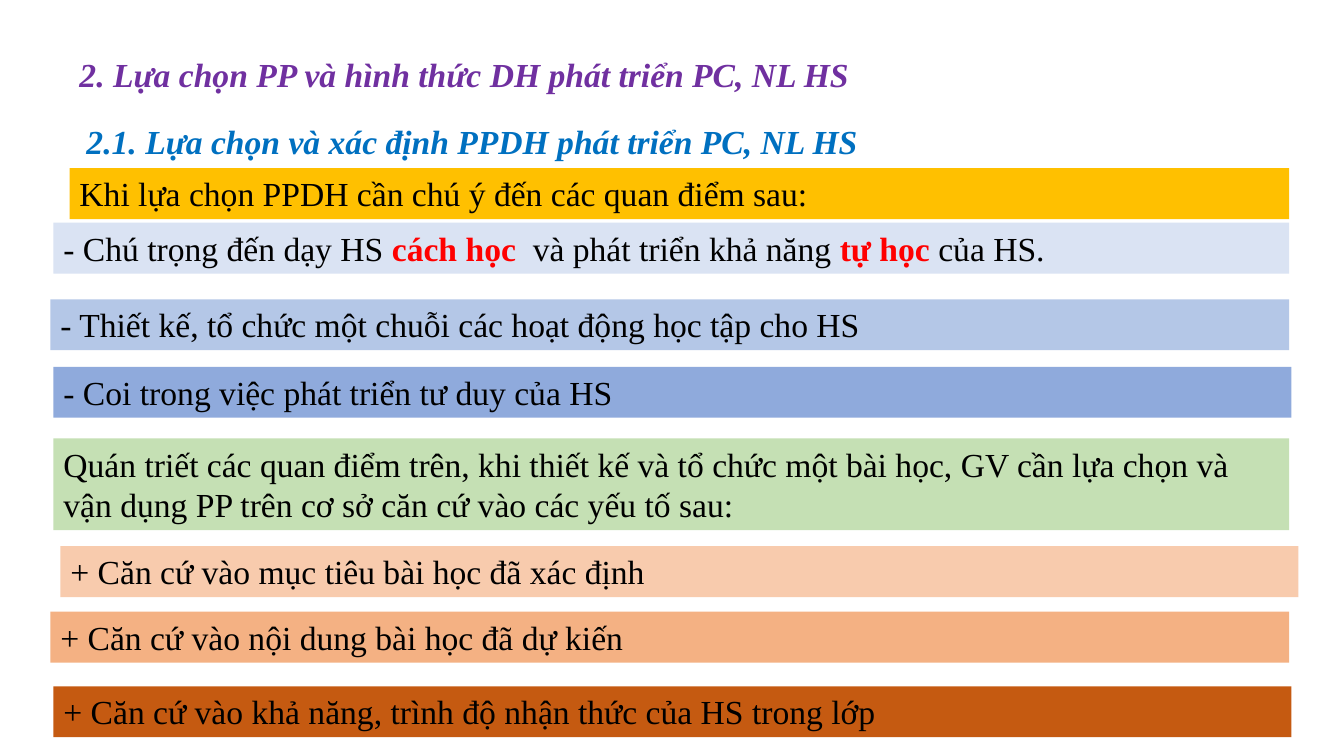
from pptx import Presentation
from pptx.dml.color import RGBColor
from pptx.enum.shapes import MSO_SHAPE
from pptx.enum.text import MSO_ANCHOR, PP_ALIGN
from pptx.util import Pt

COLORS = {
    "purple": "7030A0", "blue": "0070C0", "black": "000000", "red": "FF0000",
    "gold": "FFC000", "ice": "DAE3F3", "sky": "B4C7E7", "steel": "8FAADC",
    "green": "C5E0B4", "peach": "F8CBAD", "orange": "F4B183", "rust": "C55A11",
}

HEADINGS = [
    (49.7, 35.3, 871.2, "purple", "2. Lựa chọn PP và hình thức DH phát triển PC, NL HS"),
    (54.7, 82.8, 866.9, "blue", "2.1. Lựa chọn và xác định PPDH phát triển PC, NL HS"),
]

BARS = [
    (49.7, 120.2, 871.2, 1, "gold", ["Khi lựa chọn PPDH cần chú ý đến các quan điểm sau:"]),
    (38.2, 159.1, 882.7, 1, "ice", ["- Chú trọng đến dạy HS ", "cách học  ",
                                    "và phát triển khả năng ", "tự học ", "của HS."]),
    (36, 213.8, 884.9, 1, "sky", ["- Thiết kế, tổ chức một chuỗi các hoạt động học tập cho HS"]),
    (38.2, 262.1, 884.2, 1, "steel", ["- Coi trong việc phát triển tư duy của HS"]),
    (38.2, 313.2, 882.7, 2, "green", ["Quán triết các quan điểm trên, khi thiết kế và tổ chức một bài học, "
                                      "GV cần lựa chọn và vận dụng PP trên cơ sở căn cứ vào các yếu tố sau:"]),
    (43.2, 390.2, 884.2, 1, "peach", ["+ Căn cứ vào mục tiêu bài học đã xác định"]),
    (36, 437, 884.9, 1, "orange", ["+ Căn cứ vào nội dung bài học đã dự kiến"]),
    (38.2, 490.3, 884.2, 1, "rust", ["+ Căn cứ vào khả năng, trình độ nhận thức của HS trong lớp"]),
]

LINE_H = 29.15
PADDING = 7.2


def rgb(name):
    return RGBColor.from_string(COLORS[name])


def add_run(p, text, color="black", bold=False, italic=False):
    r = p.add_run()
    r.text = text
    r.font.name = "Times New Roman"
    r.font.size = Pt(24)
    r.font.bold = bold
    r.font.italic = italic
    r.font.color.rgb = rgb(color)


def first_paragraph(sp):
    tf = sp.text_frame
    tf.word_wrap = True
    tf.vertical_anchor = MSO_ANCHOR.TOP
    p = tf.paragraphs[0]
    p.alignment = PP_ALIGN.LEFT
    return p


def main():
    prs = Presentation()
    prs.slide_width, prs.slide_height = Pt(960), Pt(540)
    s = prs.slides.add_slide(prs.slide_layouts[6])

    for x, y, w, color, text in HEADINGS:
        sp = s.shapes.add_textbox(Pt(x), Pt(y), Pt(w), Pt(LINE_H + PADDING))
        add_run(first_paragraph(sp), text, color=color, bold=True, italic=True)

    for x, y, w, lines, fill, parts in BARS:
        h = lines * LINE_H + PADDING
        sp = s.shapes.add_shape(MSO_SHAPE.RECTANGLE, Pt(x), Pt(y), Pt(w), Pt(h))
        sp.shadow.inherit = False
        sp.fill.solid()
        sp.fill.fore_color.rgb = rgb(fill)
        sp.line.fill.background()
        p = first_paragraph(sp)
        for i, text in enumerate(parts):
            key = i % 2 == 1
            add_run(p, text, color="red" if key else "black", bold=key)

    prs.save("out.pptx")


if __name__ == "__main__":
    main()
